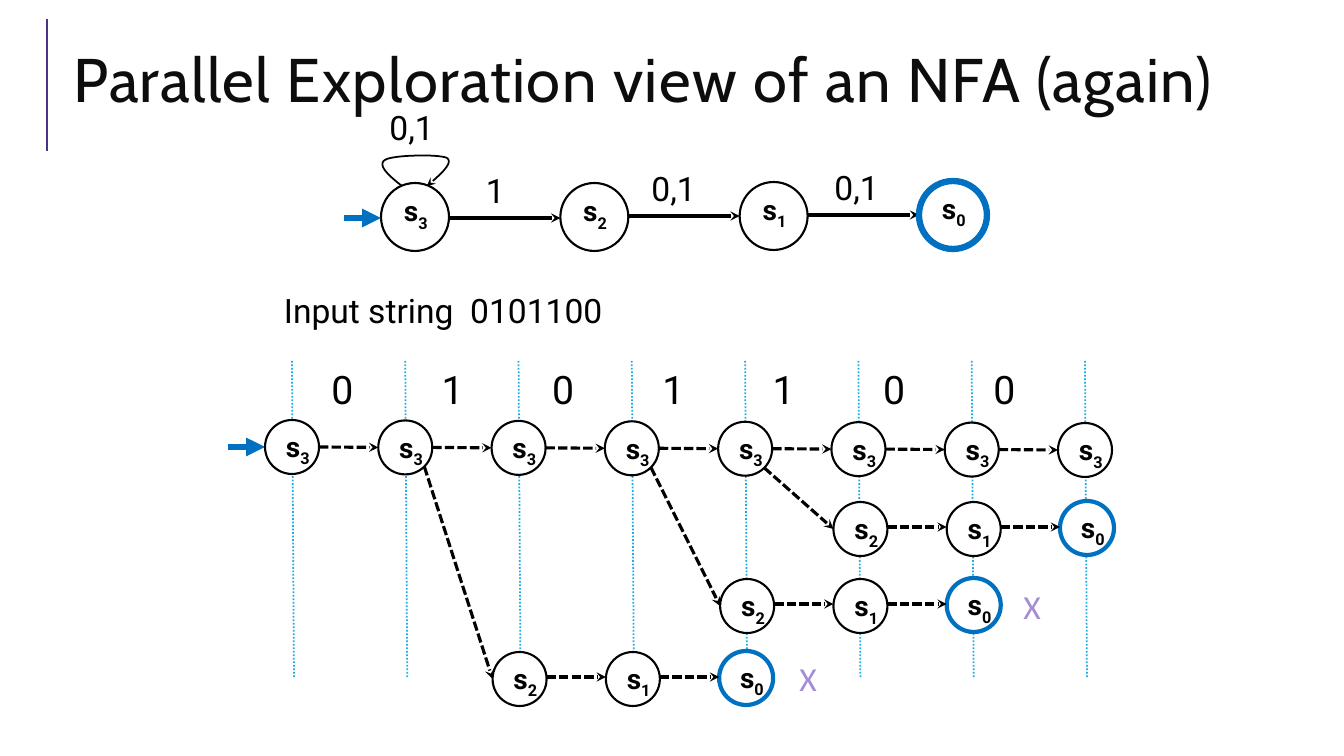
import pptx
import pptx.dml.color
import pptx.enum.dml
import pptx.enum.shapes
import pptx.enum.text
import pptx.oxml
import pptx.oxml.ns
import pptx.util

RGB = pptx.dml.color.RGBColor
BLACK = RGB(0x00, 0x00, 0x00)
INK = RGB(0x0D, 0x0D, 0x0D)
WHITE = RGB(0xFF, 0xFF, 0xFF)
BLUE = RGB(0x00, 0x70, 0xC0)
CYAN = RGB(0x1C, 0xAD, 0xE4)
PURPLE = RGB(0x4C, 0x32, 0x82)
LILAC = RGB(0xA4, 0x8D, 0xD3)
DOT = pptx.enum.dml.MSO_LINE.ROUND_DOT
DASH = pptx.enum.dml.MSO_LINE.SQUARE_DOT
SCALE = 914400 / 100.8

TITLE = "Parallel Exploration view of an NFA (again)"
PROMPT = "Input string  0101100"
INPUT = "0101100"
NFA = [("3", 217), ("2", 217), ("1", 216), ("0", 215)]
HOPS = [218, 216, 215]
EDGES = [("0,1", 414, 127, 69), ("1", 496, 190, 40),
         ("0,1", 676, 188, 69), ("0,1", 859, 187, 69)]
LOOP = [(402, 186), (389, 176), (377, 165), (385, 160), (392, 155),
        (439, 154), (447, 158), (454, 163), (440, 175), (427, 186)]
BRANCHES = [
    {"states": "210", "col": 5, "x": 2, "y": 529},
    {"states": "210", "col": 4, "x": 2, "y": 606},
    {"states": "210", "col": 2, "x": 1, "y": 679},
]
DEAD = [(1033, 606), (809, 678)]
BIG, SMALL = 68, 54
LEFT, SPAN = 292, 793
TOP, DRIFT = 447, 3


def emu(px):
    return pptx.util.Emu(round(px * SCALE))


deck = pptx.Presentation()
deck.slide_width, deck.slide_height = emu(1344), emu(756)
slide = deck.slides.add_slide(deck.slide_layouts[6])
shapes = slide.shapes


def tip(shape, kind):
    end = pptx.oxml.parse_xml(
        '<a:tailEnd %s type="%s"/>' % (pptx.oxml.ns.nsdecls("a"), kind))
    shape.element.spPr.get_or_add_ln().append(end)


def link(start, stop, color, width, dash=None, head=None):
    wire = shapes.add_connector(
        pptx.enum.shapes.MSO_CONNECTOR.STRAIGHT,
        *[emu(px) for px in start + stop])
    wire.line.color.rgb = color
    wire.line.width = pptx.util.Pt(width)
    if dash is not None:
        wire.line.dash_style = dash
    if head:
        tip(wire, head)
    wire.element.spPr.append(pptx.oxml.parse_xml(
        "<a:effectLst %s/>" % pptx.oxml.ns.nsdecls("a")))


def write(x, y, wide, high, text, size, color=BLACK, font="Roboto", sub=""):
    box = shapes.add_textbox(emu(x - wide / 2), emu(y - high / 2),
                             emu(wide), emu(high))
    frame = box.text_frame
    frame.word_wrap = False
    frame.auto_size = pptx.enum.text.MSO_AUTO_SIZE.SHAPE_TO_FIT_TEXT
    for part in filter(None, (text, sub)):
        run = frame.paragraphs[0].add_run()
        run.text = part
        run.font.size = pptx.util.Pt(size)
        run.font.name = font
        run.font.color.rgb = color
        if sub:
            run.font.bold = True
    if sub:
        run.font._element.set("baseline", "-25000")
    return frame


def state(x, y, size, name, heavy, shift):
    ring = shapes.add_shape(
        pptx.enum.shapes.MSO_SHAPE.OVAL, emu(x - size / 2), emu(y - size / 2),
        emu(size), emu(size))
    ring.shadow.inherit = False
    ring.fill.solid()
    ring.fill.fore_color.rgb = WHITE
    final = name == "0"
    ring.line.color.rgb = BLUE if final else BLACK
    ring.line.width = pptx.util.Pt(heavy if final else 1.5)
    write(x + shift[0], y + shift[1], 44, 44, "s", 20, sub=name)


def loop():
    dots = []
    for k in range(0, len(LOOP) - 1, 3):
        a, b, c, d = LOOP[k:k + 4]
        for step in range(1, 17):
            t = step / 16
            u = 1 - t
            dots.append(tuple(
                emu(u**3 * p + 3 * u * u * t * q + 3 * u * t * t * r + t**3 * s)
                for p, q, r, s in zip(a, b, c, d)))
    pen = shapes.build_freeform(*[emu(px) for px in LOOP[0]], scale=1.0)
    pen.add_line_segments(dots, close=False)
    curve = pen.convert_to_shape()
    curve.shadow.inherit = False
    curve.fill.background()
    curve.line.color.rgb = BLACK
    curve.line.width = pptx.util.Pt(1.25)
    tip(curve, "stealth")


def grid(col):
    return LEFT + SPAN * col / 7, TOP + DRIFT * col / 7


def dashed(start, stop):
    link(start, stop, BLACK, 2.25, DASH, "stealth")


def main():
    link((47, 151), (47, 19), PURPLE, 1.5)
    head = write(680, 85, 1233, 112, TITLE, 44, INK, "Cabin")
    head.word_wrap = True
    head.auto_size = pptx.enum.text.MSO_AUTO_SIZE.NONE
    head.vertical_anchor = pptx.enum.text.MSO_ANCHOR.MIDDLE
    head.paragraphs[0].line_spacing = 0.8
    head.paragraphs[0].runs[0].font._element.set("spc", "100")

    for k, (name, y) in enumerate(NFA):
        x = 415 + 538 * k / 3
        state(x, y, BIG, name, 4.5, (1, -6))
        if k < len(HOPS):
            link((x + BIG / 2, HOPS[k]), (x + 538 / 3 - BIG / 2, HOPS[k]),
                 BLACK, 2.25, head="stealth")
    loop()
    for x, y in ((344, 218), (228, 447)):
        link((x, y), (x + 37, y), BLUE, 4.5, head="triangle")
    for text, x, y, wide in EDGES:
        write(x, y, wide, 50, text, 24)
    write(444, 310, 340, 50, PROMPT, 24)

    half = SMALL / 2
    for col in range(len(INPUT) + 1):
        x, y = grid(col)
        link((x, 361), (x + 2, 678), CYAN, 1.25, DOT)
        state(x, y, SMALL, "3", 3, (6, 0))
        if col:
            old, high = grid(col - 1)
            dashed((old + half, high), (x - half, y))
    for k, bit in enumerate(INPUT):
        write(343 + 662 * k / 6, 389, 43, 57, bit, 28)

    for branch in BRANCHES:
        y = branch["y"]
        x, high = grid(branch["col"] - 1)
        first = grid(branch["col"])[0] + branch["x"]
        dashed((x + 19, high + 19), (first - half, y))
        for k, name in enumerate(branch["states"]):
            x = first + SPAN * k / 7
            state(x, y - (name == "0"), SMALL, name, 3, (6, 0))
            if k:
                dashed((x - SPAN / 7 + half, y - 2), (x - half, y - 2))
    for x, y in DEAD:
        write(x, y, 39, 50, "X", 24, LILAC, "Calibri")
    deck.save("out.pptx")


if __name__ == "__main__":
    main()
